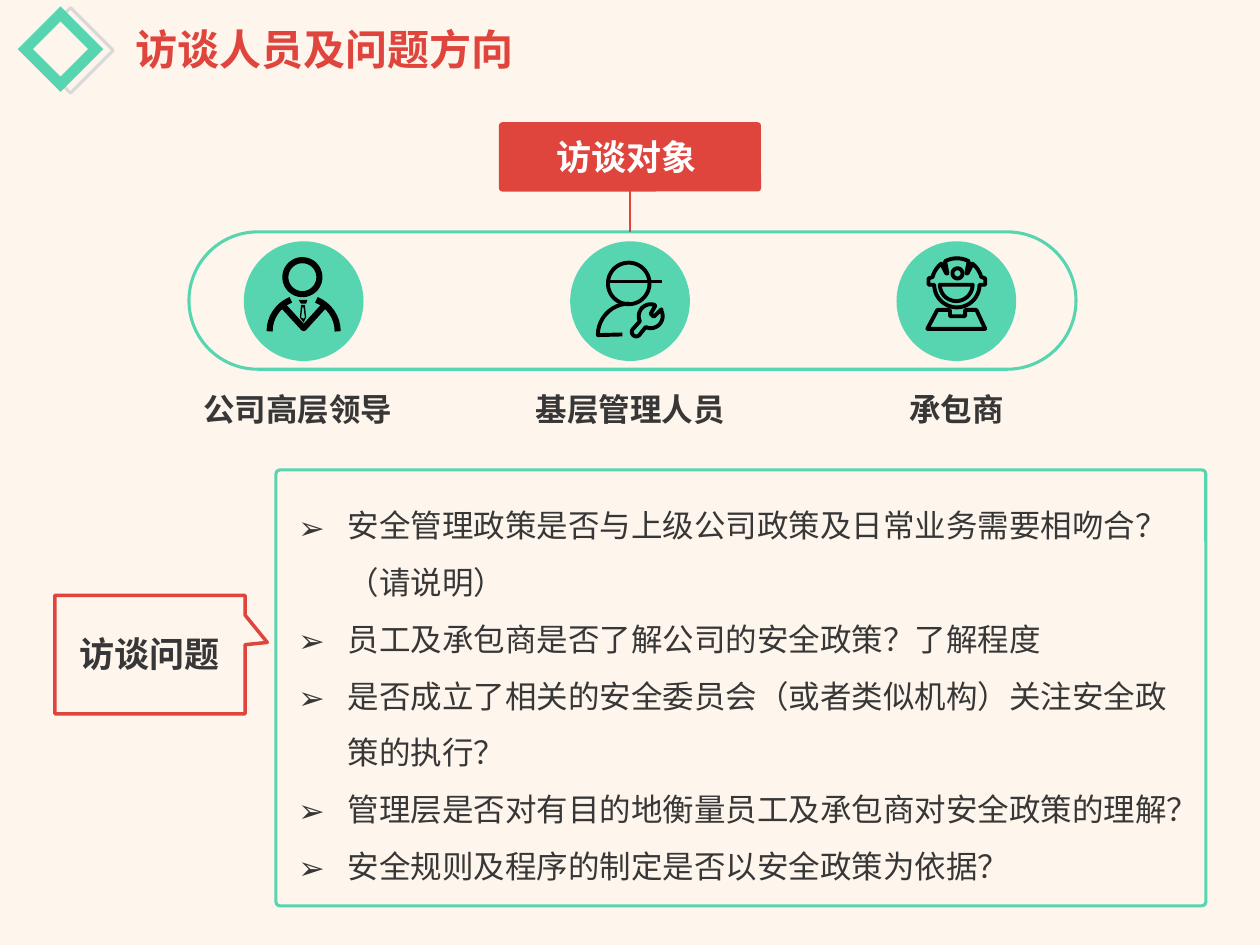
from math import cos, radians, sin
from lxml import etree
from pptx import Presentation
from pptx.dml.color import RGBColor
from pptx.enum.shapes import MSO_CONNECTOR, MSO_SHAPE
from pptx.enum.text import MSO_AUTO_SIZE, PP_ALIGN
from pptx.oxml.ns import qn
from pptx.util import Inches, Pt

RECT, FRAME, OVAL = MSO_SHAPE.RECTANGLE, MSO_SHAPE.FRAME, MSO_SHAPE.OVAL
ROUND, CALL = MSO_SHAPE.ROUNDED_RECTANGLE, MSO_SHAPE.RECTANGULAR_CALLOUT
LEFT, MID = PP_ALIGN.LEFT, PP_ALIGN.CENTER

THEME = {
    "font": "Noto Sans CJK SC",
    "back": "FEF5EC", "red": "DF453D", "green": "57D5B1",
    "gray": "D9D9D9", "dark": "373737", "white": "FFFFFF", "black": "000000",
    "title": 24, "head": 20, "body": 18,
}

TITLE = "访谈人员及问题方向"
TARGET = "访谈对象"
ASK = "访谈问题"
ROLES = [("公司高层领导", 1.73), ("基层管理人员", 1.72), ("承包商", 0.96)]
ITEMS = [
    "安全管理政策是否与上级公司政策及日常业务需要相吻合？（请说明）",
    "员工及承包商是否了解公司的安全政策？了解程度",
    "是否成立了相关的安全委员会（或者类似机构）关注安全政策的执行？",
    "管理层是否对有目的地衡量员工及承包商对安全政策的理解？",
    "安全规则及程序的制定是否以安全政策为依据？",
]
FIRST, PITCH, ROW, DISC = 2.41, 2.59, 2.39, 0.95


def arc(x, y, r, start=0, end=360):
    """Points along an arc, in degrees clockwise from the right."""
    steps = max(6, int(abs(end - start) / 8))
    turns = [radians(start + (end - start) * i / steps) for i in range(steps + 1)]
    return [(x + r * cos(t), y + r * sin(t)) for t in turns]


# Icon parts: role index, stroke in points (0 = filled), list of (closed, points).
# Points are hundredths of an inch from the centre of the disc.
ICONS = [
    (0, 3.5, [
        (True, arc(-1, -19, 13.5)),
        (False, [(-16, 4), (0, 21.5), (16, 4)]),
        (False, arc(0, 24, 27, -68, 0)),
        (False, arc(0, 24, 27, 180, 248)),
    ]),
    (0, 0, [
        (True, [(-4, -1), (3, -1), (2, 2), (-2, 2)]),
        (True, [(-2, 3), (1, 3), (2, 13), (0, 17), (-3, 13)]),
        (True, [(-1, 5), (0, 5), (1, 13), (0, 14), (-2, 13)]),
    ]),
    (1, 2.25, [
        (True, [(20, 4), (16.5, 10), (19, 12.5), (25, 6.5)]
         + arc(16.5, 12, 9.5, -25, 115) + arc(5, 24.5, 3.5, 45, 225)
         + arc(16.5, 12, 9.5, 155, 290)),
    ]),
    (1, 2.25, [
        (True, arc(-1, -14, 16.5)),
        (False, [(-17.5, -15.5), (25, -15.5)]),
        (False, arc(-0.5, 27, 25, 270, 180) + [(-6, 26.5)]),
    ]),
    (2, 2.25, [
        (True, [(-15, 7), (-5, 7), (-5, 12), (7, 12), (7, 7), (16, 7),
                (23, 22), (-23, 22)]),
        (True, arc(0.5, -13, 18, 0, 180)
         + [(-22, -13), (-22, -18), (-19, -19)] + arc(0.5, -14, 20, 195, 232)
         + [(-8, -22), (-7, -22)] + arc(0.5, -14, 20, 242, 298)
         + [(8, -22), (9, -22)] + arc(0.5, -14, 20, 308, 345)
         + [(23, -18), (23, -13)]),
        (True, arc(1, -22, 4)),
        (True, arc(0, -13, 13, 0, 180)),
    ]),
]


def tint(name):
    return RGBColor.from_string(THEME[name])


def paint(shape, fill=None, line=None, width=1.75):
    shape.shadow.inherit = False
    if fill:
        shape.fill.solid()
        shape.fill.fore_color.rgb = tint(fill)
    else:
        shape.fill.background()
    if line:
        shape.line.color.rgb = tint(line)
        shape.line.width = Pt(width)
    else:
        shape.line.fill.background()


def block(slide, kind, box, adj=(), turn=0, **look):
    shape = slide.shapes.add_shape(kind, *map(Inches, box))
    for i, val in enumerate(adj):
        shape.adjustments[i] = val
    shape.rotation = turn
    paint(shape, **look)


def mark(para, sign, inset):
    """Give a paragraph a hanging bullet."""
    props = para._p.get_or_add_pPr()
    props.set("marL", str(Inches(inset)))
    props.set("indent", str(-Inches(inset)))
    etree.SubElement(props, qn("a:buFont")).set("typeface", THEME["font"])
    etree.SubElement(props, qn("a:buChar")).set("char", sign)


def write(slide, text, box, size="body", color="dark", bold=True,
          align=LEFT, wrap=False, space=None, sign=None):
    shape = slide.shapes.add_textbox(*map(Inches, box))
    frame = shape.text_frame
    frame.word_wrap = wrap
    frame.auto_size = MSO_AUTO_SIZE.SHAPE_TO_FIT_TEXT
    for i, words in enumerate([text] if isinstance(text, str) else text):
        para = frame.paragraphs[0] if i == 0 else frame.add_paragraph()
        para.alignment = align
        if space:
            para.line_spacing = space
        if sign:
            mark(para, sign, 0.39)
        run = para.add_run()
        run.text = words
        font = run.font
        font.name, font.size, font.bold = THEME["font"], Pt(THEME[size]), bold
        font.color.rgb = tint(color)
        east = etree.SubElement(run._r.get_or_add_rPr(), qn("a:ea"))
        east.set("typeface", THEME["font"])


def icon(slide, mid, width, parts):
    pen = None
    for shut, dots in parts:
        path = [(Inches(mid + x / 100), Inches(ROW + y / 100)) for x, y in dots]
        if pen is None:
            pen = slide.shapes.build_freeform(*path[0], scale=1.0)
        else:
            pen.move_to(*path[0])
        pen.add_line_segments(path[1:], close=shut)
    shape = pen.convert_to_shape()
    if width:
        paint(shape, line="black", width=width)
    else:
        paint(shape, fill="black")


def stem(slide, x, top, end):
    line = slide.shapes.add_connector(
        MSO_CONNECTOR.STRAIGHT, *map(Inches, (x, top, x, end)))
    line.line.color.rgb = tint("red")
    line.line.width = Pt(1.5)
    etree.SubElement(line._element.spPr, qn("a:effectLst"))


def main():
    deck = Presentation()
    deck.slide_width, deck.slide_height = Inches(10), Inches(7.5)
    slide = deck.slides.add_slide(deck.slide_layouts[6])
    slide.background.fill.solid()
    slide.background.fill.fore_color.rgb = tint("back")

    write(slide, TITLE, (0.98, 0.14, 3.23, 0.5), size="title", color="red")
    block(slide, RECT, (0.32, 0.16, 0.48, 0.48), turn=45, line="gray")
    block(slide, FRAME, (0.24, 0.15, 0.48, 0.48), [0.177], 45, fill="green")

    block(slide, ROUND, (3.96, 0.97, 2.08, 0.55), [0.049], fill="red")
    block(slide, ROUND, (1.5, 1.84, 7.04, 1.09), [0.5], line="green")
    mids = [FIRST + PITCH * i for i in range(len(ROLES))]
    for mid, (role, wide) in zip(mids, ROLES):
        block(slide, OVAL, (mid - DISC / 2, ROW - DISC / 2, DISC, DISC), fill="green")
        # The first label sits a little left of its disc.
        left = 1.5 if mid == FIRST else mid - wide / 2
        write(slide, role, (left, 3.05, wide, 0.4), align=MID)
    for i, width, parts in ICONS:
        icon(slide, mids[i], width, parts)
    write(slide, TARGET, (4.32, 1.03, 1.33, 0.44), size="head", color="white")
    stem(slide, 5, 1.46, 1.84)

    block(slide, CALL, (0.72, 4.44, 0.94, 1.51), [0.103, 0.617], 270,
          line="red", width=2)
    write(slide, ASK, (0.53, 4.97, 1.32, 0.44), size="head")
    block(slide, ROUND, (2.19, 3.73, 7.38, 3.46), [0.009], line="green")
    write(slide, ITEMS, (2.27, 3.82, 7.18, 3.28), bold=False, wrap=True,
          space=1.5, sign="➢")
    deck.save("out.pptx")


if __name__ == "__main__":
    main()
